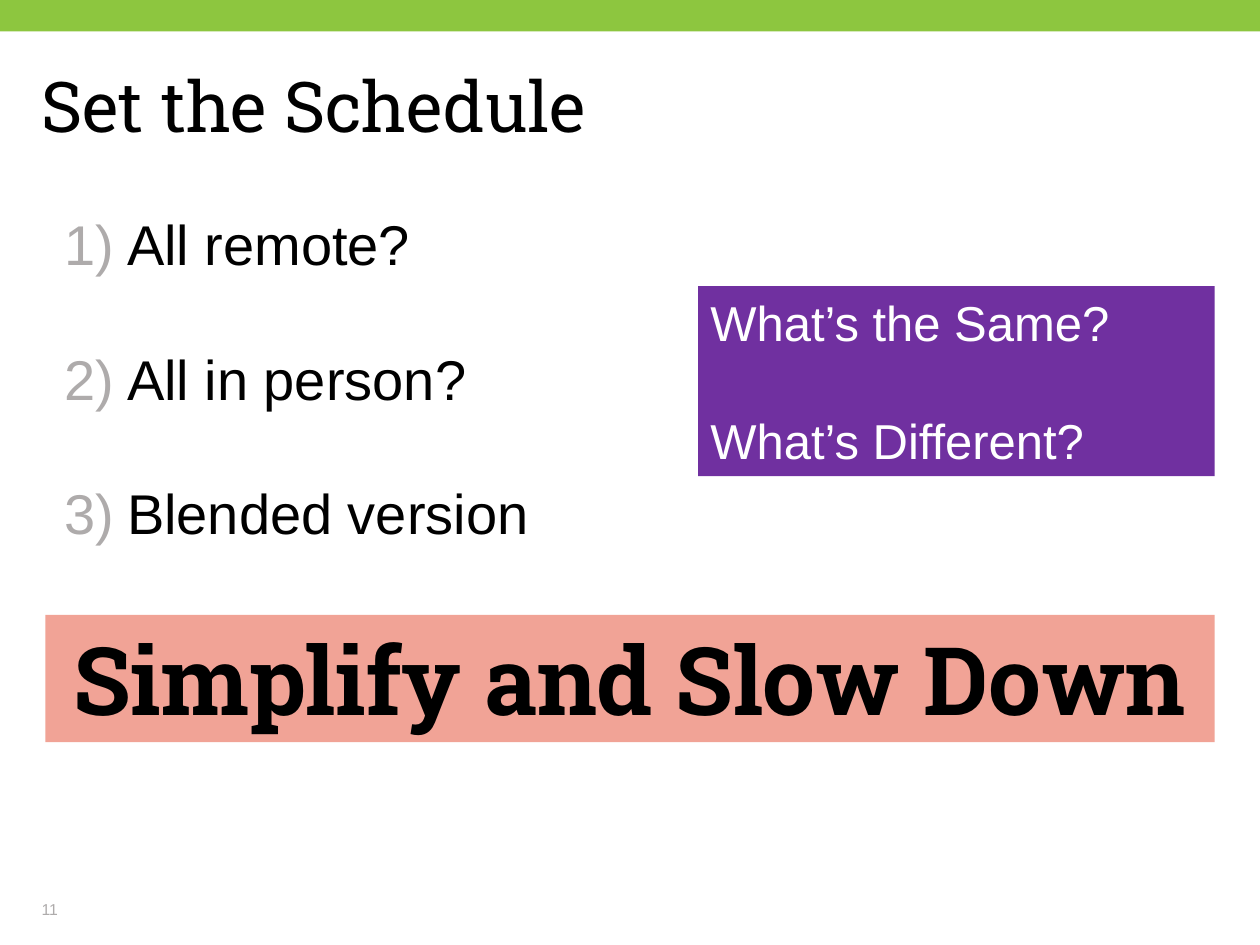
"""Build the "Set the Schedule" slide."""
import pptx
import pptx.util
from lxml import etree
from pptx.dml.color import RGBColor
from pptx.enum.shapes import MSO_SHAPE
from pptx.enum.text import MSO_ANCHOR, PP_ALIGN
from pptx.oxml.ns import qn
from pptx.util import Inches, Pt

GREEN = RGBColor(0x8D, 0xC6, 0x3F)
PURPLE = RGBColor(0x70, 0x30, 0xA0)
SALMON = RGBColor(0xF1, 0xA3, 0x96)
GRAY = RGBColor(0xAE, 0xAB, 0xAB)
BLACK = RGBColor(0, 0, 0)
WHITE = RGBColor(0xFF, 0xFF, 0xFF)

HEADING_FONT = "Roboto Slab"
TITLE = ["Set the Schedule"]
OPTIONS = ["All remote?", "All in person?", "Blended version"]
QUESTIONS = ["What’s the Same?", "What’s Different?"]
MESSAGE = ["Simplify and Slow Down"]
PAGE_NUMBER = ["11"]

LEFT = 0.33
RIGHT = 9.64
NO_INSETS = (0, 0, 0, 0)


def number_paragraph(para, color):
    properties = para._p.get_or_add_pPr()
    properties.set("marL", str(Inches(0.58)))
    properties.set("indent", str(Inches(-0.5)))
    bullet_color = etree.SubElement(properties, qn("a:buClr"))
    etree.SubElement(bullet_color, qn("a:srgbClr"), val=str(color))
    etree.SubElement(properties, qn("a:buFont"), typeface="Arial")
    etree.SubElement(properties, qn("a:buAutoNum"), type="arabicParenR")


def add_text(page, lines, left, top, width, height, *, size=18, font="Arial",
             color=BLACK, bold=False, fill=None, align=PP_ALIGN.LEFT,
             anchor=MSO_ANCHOR.TOP, insets=(0.1, 0.05, 0.1, 0.05),
             line_spacing=1.0, gap=0, number_color=None):
    area = [Inches(length) for length in (left, top, width, height)]
    if fill is None:
        box = page.shapes.add_textbox(*area)
    else:
        box = page.shapes.add_shape(MSO_SHAPE.RECTANGLE, *area)
        box.shadow.inherit = False
        box.fill.solid()
        box.fill.fore_color.rgb = fill
        box.line.fill.background()
    frame = box.text_frame
    frame.word_wrap = True
    frame.vertical_anchor = anchor
    (frame.margin_left, frame.margin_top, frame.margin_right,
     frame.margin_bottom) = [Inches(inset) for inset in insets]
    for index, line in enumerate(lines):
        para = frame.add_paragraph() if index else frame.paragraphs[0]
        para.alignment = align
        para.line_spacing = line_spacing
        para.space_before = Pt(gap if index else 0)
        if number_color is not None:
            number_paragraph(para, number_color)
        span = para.add_run()
        span.text = line
        span.font.name = font
        span.font.size = Pt(size)
        span.font.bold = bold
        span.font.color.rgb = color


def main():
    deck = pptx.Presentation()
    deck.slide_width, deck.slide_height = Inches(10), Inches(7.5)
    page = deck.slides.add_slide(deck.slide_layouts[6])

    add_text(page, [], 0, 0, 10, 0.25, fill=GREEN)
    add_text(page, TITLE, LEFT, 0.57, RIGHT - LEFT, 1.09, size=40,
             font=HEADING_FONT, insets=NO_INSETS, line_spacing=0.9)
    add_text(page, OPTIONS, LEFT, 1.67, 4.31, 3.03, size=32,
             insets=(0.1, 0.1, 0.1, 0.05), line_spacing=0.8, gap=46,
             number_color=GRAY)
    add_text(page, PAGE_NUMBER, LEFT, 7.05, 2.25, 0.24, size=9, color=GRAY,
             anchor=MSO_ANCHOR.BOTTOM, insets=NO_INSETS)
    add_text(page, QUESTIONS, RIGHT - 4.1, 2.27, 4.1, 1.51, size=28,
             color=WHITE, fill=PURPLE, gap=34)
    add_text(page, MESSAGE, RIGHT - 9.28, 4.88, 9.28, 1.01, size=54,
             font=HEADING_FONT, bold=True, fill=SALMON, align=PP_ALIGN.CENTER)
    deck.save("out.pptx")


if __name__ == "__main__":
    main()
